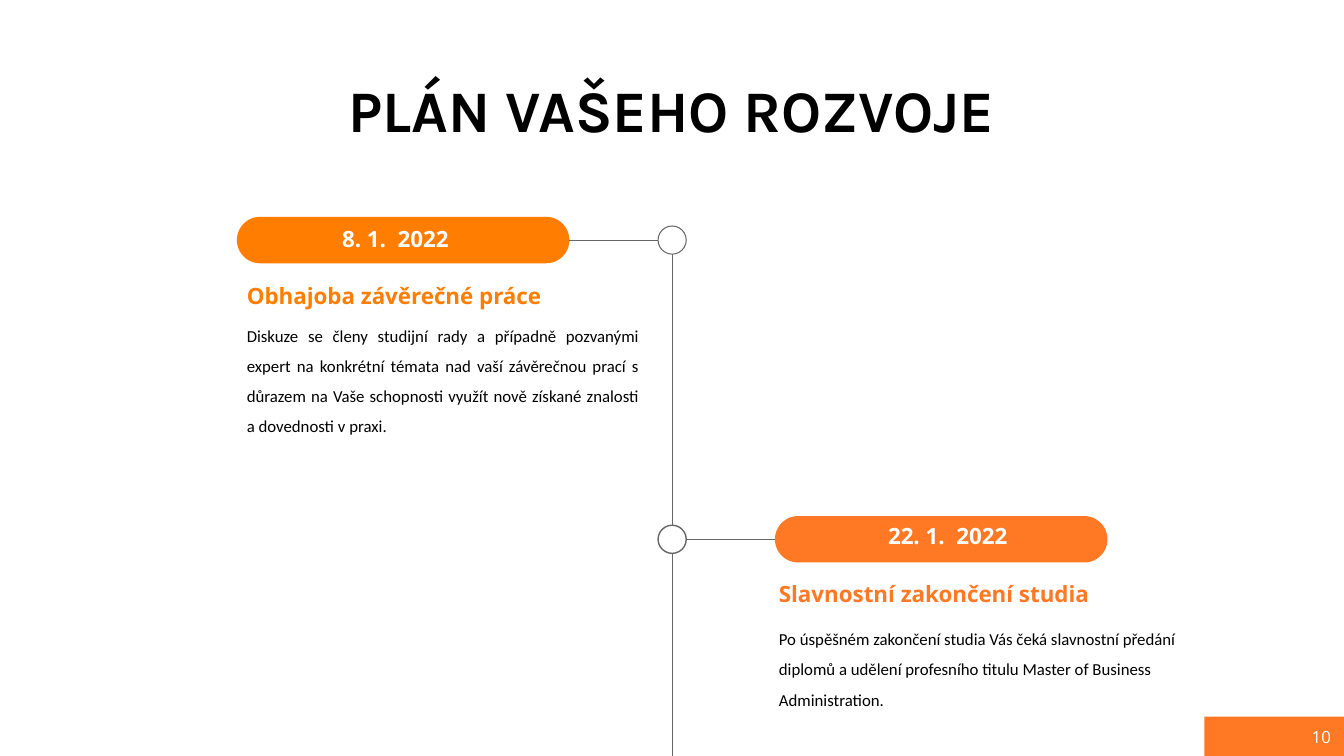
"""Build the development plan slide: a vertical timeline with two dated steps."""
from lxml.etree import SubElement
from pptx import Presentation
from pptx.dml.color import RGBColor
from pptx.enum.shapes import MSO_CONNECTOR, MSO_SHAPE
from pptx.enum.text import MSO_ANCHOR, PP_ALIGN
from pptx.oxml.ns import qn
from pptx.util import Cm, Pt

AMBER = RGBColor(0xFF, 0x7D, 0x00)
ORANGE = RGBColor(0xFF, 0x78, 0x24)
GRAY = RGBColor(0x66, 0x66, 0x66)
BLACK = RGBColor(0, 0, 0)
WHITE = RGBColor(0xFF, 0xFF, 0xFF)

TITLE = "PLÁN VAŠEHO ROZVOJE"
PAGE = "10"
STEPS = [
    {
        "date": "8. 1.  2022", "date_at": (6.88, 5.56),
        "head": "Obhajoba závěrečné práce", "head_at": (5.97, 6.99),
        "body": "Diskuze se členy studijní rady a případně pozvanými expert na "
                "konkrétní témata nad vaší závěrečnou prací s důrazem na Vaše "
                "schopnosti využít nově získané znalosti a dovednosti v praxi.",
        "body_at": (5.97, 7.82, 10.39, 3.33), "align": PP_ALIGN.JUSTIFY,
        "color": AMBER, "mid": 6.05, "left": 5.97, "side": -1, "line": 0.75,
    },
    {
        "date": "22. 1.  2022", "date_at": (20.8, 13.03),
        "head": "Slavnostní zakončení studia", "head_at": (19.38, 14.5),
        "body": "Po úspěšném zakončení studia Vás čeká slavnostní předání diplomů "
                "a udělení profesního titulu Master of Business Administration.",
        "body_at": (19.38, 15.47, 11.56, 2.57), "align": PP_ALIGN.LEFT,
        "color": ORANGE, "mid": 13.59, "left": 19.53, "side": 1, "line": 1,
    },
]
WIDE, HIGH = 33.87, 19.05
AXIS = 16.94
NODE = 0.71
PILL = (8.38, 1.17)
DATE = (6.17, 0.94)
HEAD = (8.51, 0.94)

deck = Presentation()
deck.slide_width, deck.slide_height = Cm(WIDE), Cm(HIGH)
slide = deck.slides.add_slide(deck.slide_layouts[6])


def add_box(kind, area, fill, line=None):
    box = slide.shapes.add_shape(kind, *map(Cm, area))
    box.shadow.inherit = False
    box.fill.solid()
    box.fill.fore_color.rgb = fill
    if line:
        box.line.color.rgb = GRAY
        box.line.width = Pt(line)
    else:
        box.line.fill.background()
    return box


def add_line(start, end):
    line = slide.shapes.add_connector(MSO_CONNECTOR.STRAIGHT, *map(Cm, start + end))
    line.line.color.rgb = GRAY
    line.line.width = Pt(0.75)
    SubElement(line._element.spPr, qn("a:effectLst"))
    return line


def add_text(text, area, size, color, face="Open Sans", bold=False,
             align=PP_ALIGN.LEFT, space=None, anchor=MSO_ANCHOR.TOP):
    frame = slide.shapes.add_textbox(*map(Cm, area)).text_frame
    frame.word_wrap = True
    frame.vertical_anchor = anchor
    para = frame.paragraphs[0]
    para.text = text
    para.alignment = align
    para.line_spacing = space
    font = para.font
    font.name, font.size, font.bold = face, Pt(size), bold
    font.color.rgb = color
    return frame


def add_step(step):
    mid, side, color = step["mid"], step["side"], step["color"]
    add_box(MSO_SHAPE.OVAL, (AXIS - NODE / 2, mid - NODE / 2, NODE, NODE),
            WHITE, step["line"])
    pill = add_box(MSO_SHAPE.ROUNDED_RECTANGLE,
                   (step["left"], mid - PILL[1] / 2, *PILL), color)
    pill.adjustments[0] = 0.5
    edge = step["left"] if side > 0 else step["left"] + PILL[0]
    arm = add_line((AXIS + side * NODE / 2, mid), (edge, mid))
    arm.end_connect(pill, 1 if side > 0 else 3)
    add_text(step["date"], step["date_at"] + DATE, 16, WHITE, bold=True,
             align=PP_ALIGN.CENTER)
    add_text(step["head"], step["head_at"] + HEAD, 16, color, bold=True)
    add_text(step["body"], step["body_at"], 12, BLACK, "Calibri",
             align=step["align"], space=1.5)


add_box(MSO_SHAPE.RECTANGLE, (30.35, 18.06, WIDE - 30.35, HIGH - 18.06), ORANGE)
page = add_text(PAGE, (31.26, 18.11, 2.61, 0.89), 12, WHITE,
                align=PP_ALIGN.RIGHT, anchor=MSO_ANCHOR.MIDDLE)
page.margin_left = page.margin_right = Cm(0.33)
add_text(TITLE, (2.29, 2.21, 29.26, 1.3), 42, BLACK, "Karla", True,
         PP_ALIGN.CENTER, 0.9, MSO_ANCHOR.MIDDLE)
add_line((AXIS, STEPS[0]["mid"] + NODE / 2), (AXIS, HIGH))
for step in STEPS:
    add_step(step)

deck.save("out.pptx")
